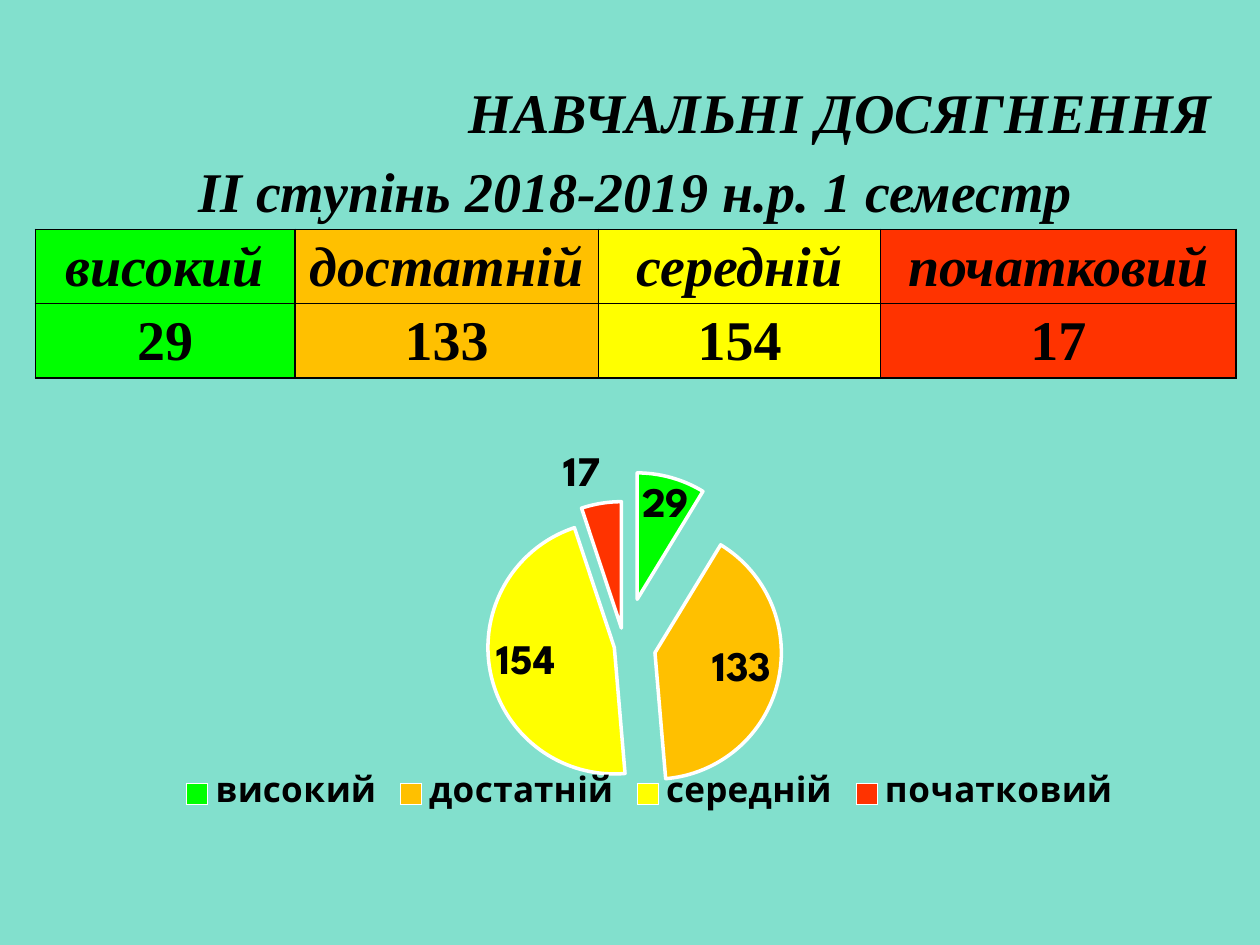
from lxml.etree import SubElement
from pptx import Presentation
from pptx.chart.data import CategoryChartData
from pptx.dml.color import RGBColor
from pptx.enum.chart import XL_CHART_TYPE as ChartType
from pptx.enum.chart import XL_LABEL_POSITION as LabelPosition
from pptx.enum.chart import XL_LEGEND_POSITION as LegendPosition
from pptx.enum.text import MSO_ANCHOR as Anchor
from pptx.enum.text import PP_ALIGN as Align
from pptx.oxml import parse_xml
from pptx.oxml.ns import nsdecls, qn
from pptx.util import Inches, Pt

COLORS = {
    "background": "82E0CD",
    "text": "000000",
    "outline": "FFFFFF",
    "високий": "00FF00",
    "достатній": "FFC000",
    "середній": "FFFF00",
    "початковий": "FF3300",
}
LEVELS = ["високий", "достатній", "середній", "початковий"]
COUNTS = [29, 133, 154, 17]
EXPLOSIONS = [38, 25, 8, 14]
COLUMN_WIDTHS = [2.06, 2.41, 2.24, 2.82]
ROW_HEIGHT = 0.59
SERIF = "Times New Roman"
SANS = "League Spartan"


def color(name):
    return RGBColor.from_string(COLORS[name])


def style_font(font, name, size, shade="text", bold=True, italic=False):
    font.name = name
    font.size = Pt(size)
    font.bold = bold
    font.italic = italic
    font.color.rgb = color(shade)


def add_title(page, text):
    title = page.shapes.title
    title.left, title.top = Inches(2.75), Inches(0.44)
    title.width, title.height = Inches(6.97), Inches(0.95)
    frame = title.text_frame
    frame.text = text
    frame.word_wrap = True
    frame.vertical_anchor = Anchor.MIDDLE
    para = frame.paragraphs[0]
    para.alignment = Align.RIGHT
    para.line_spacing = 0.9
    style_font(para.runs[0].font, SERIF, 32, italic=True)


def set_borders(cell, visible):
    properties = cell._tc.get_or_add_tcPr()
    for side in "LRTB":
        line = SubElement(properties, qn(f"a:ln{side}"), w=str(Pt(1)))
        if side in visible:
            fill = SubElement(line, qn("a:solidFill"))
            SubElement(fill, qn("a:srgbClr"), val=COLORS["text"])
        else:
            SubElement(line, qn("a:noFill"))


def fill_cell(cell, text, shade=None, italic=True):
    cell.vertical_anchor = Anchor.BOTTOM
    cell.margin_top = cell.margin_bottom = Inches(0.04)
    set_borders(cell, "LRTB" if shade else "B")
    if shade:
        cell.fill.solid()
        cell.fill.fore_color.rgb = color(shade)
    else:
        cell.fill.background()
    para = cell.text_frame.paragraphs[0]
    para.text = text
    para.alignment = Align.CENTER
    for span in para.runs:
        style_font(span.font, SERIF, 32, italic=italic)


def add_level_table(page, heading):
    frame = page.shapes.add_table(
        3, len(LEVELS), Inches(0.28), Inches(1.23),
        Inches(sum(COLUMN_WIDTHS)), Inches(3 * ROW_HEIGHT))
    table = frame.table
    table.first_row = table.horz_banding = False
    for row in table.rows:
        row.height = Inches(ROW_HEIGHT)
    table.cell(0, 0).merge(table.cell(0, len(LEVELS) - 1))
    for index, (level, count) in enumerate(zip(LEVELS, COUNTS)):
        table.columns[index].width = Inches(COLUMN_WIDTHS[index])
        fill_cell(table.cell(0, index), "" if index else heading)
        fill_cell(table.cell(1, index), level, level)
        fill_cell(table.cell(2, index), str(count), level, italic=False)


def set_layout(element, position, target, **box):
    for old in element.findall(qn("c:layout")):
        element.remove(old)
    layout = parse_xml(f"<c:layout {nsdecls('c')}/>")
    manual = SubElement(layout, qn("c:manualLayout"))
    if target:
        SubElement(manual, qn("c:layoutTarget"), val=target)
    for axis in "xy":
        SubElement(manual, qn(f"c:{axis}Mode"), val="edge")
    for key, value in box.items():
        SubElement(manual, qn(f"c:{key}"), val=str(value))
    element.insert(position, layout)


def style_slice(point, level, explosion):
    point.format.fill.solid()
    point.format.fill.fore_color.rgb = color(level)
    point.format.line.color.rgb = color("outline")
    point.format.line.width = Pt(2)
    shape = point.format.fill._xPr.getparent()
    offset = parse_xml(f'<c:explosion {nsdecls("c")} val="{explosion}"/>')
    shape.find(qn("c:spPr")).addprevious(offset)


def add_level_chart(page):
    data = CategoryChartData()
    data.categories = LEVELS
    data.add_series("Series 1", COUNTS)
    chart = page.shapes.add_chart(
        ChartType.PIE, Inches(1.06), Inches(3.36),
        Inches(8.03), Inches(3.46), data).chart
    chart.has_title = False
    style_font(chart.font, SANS, 10, "outline", bold=False)

    chart.has_legend = True
    legend = chart.legend
    legend.position = LegendPosition.BOTTOM
    legend.include_in_layout = False
    style_font(legend.font, SANS, 20)
    set_layout(legend._element, 1, None, x=0.04, y=0.79, w=0.94, h=0.12)

    plot = chart.plots[0]
    plot.vary_by_categories = True
    set_layout(plot._element.getparent(), 0, "inner",
               x=0.08, y=0.22, w=0.81, h=0.58)
    series = plot.series[0]
    for index, level in enumerate(LEVELS):
        style_slice(series.points[index], level, EXPLOSIONS[index])
    labels = series.data_labels
    labels.show_value = True
    labels.show_percentage = False
    labels.position = LabelPosition.BEST_FIT
    style_font(labels.font, SANS, 24)


def main():
    """Build the slide on learning achievements and save it."""
    deck = Presentation()
    deck.slide_width, deck.slide_height = Inches(10), Inches(7.5)
    page = deck.slides.add_slide(deck.slide_layouts[5])
    page.background.fill.solid()
    page.background.fill.fore_color.rgb = color("background")
    add_title(page, "НАВЧАЛЬНІ ДОСЯГНЕННЯ")
    add_level_table(page, "ІІ ступінь 2018-2019 н.р. 1 семестр")
    add_level_chart(page)
    deck.save("out.pptx")


if __name__ == "__main__":
    main()
